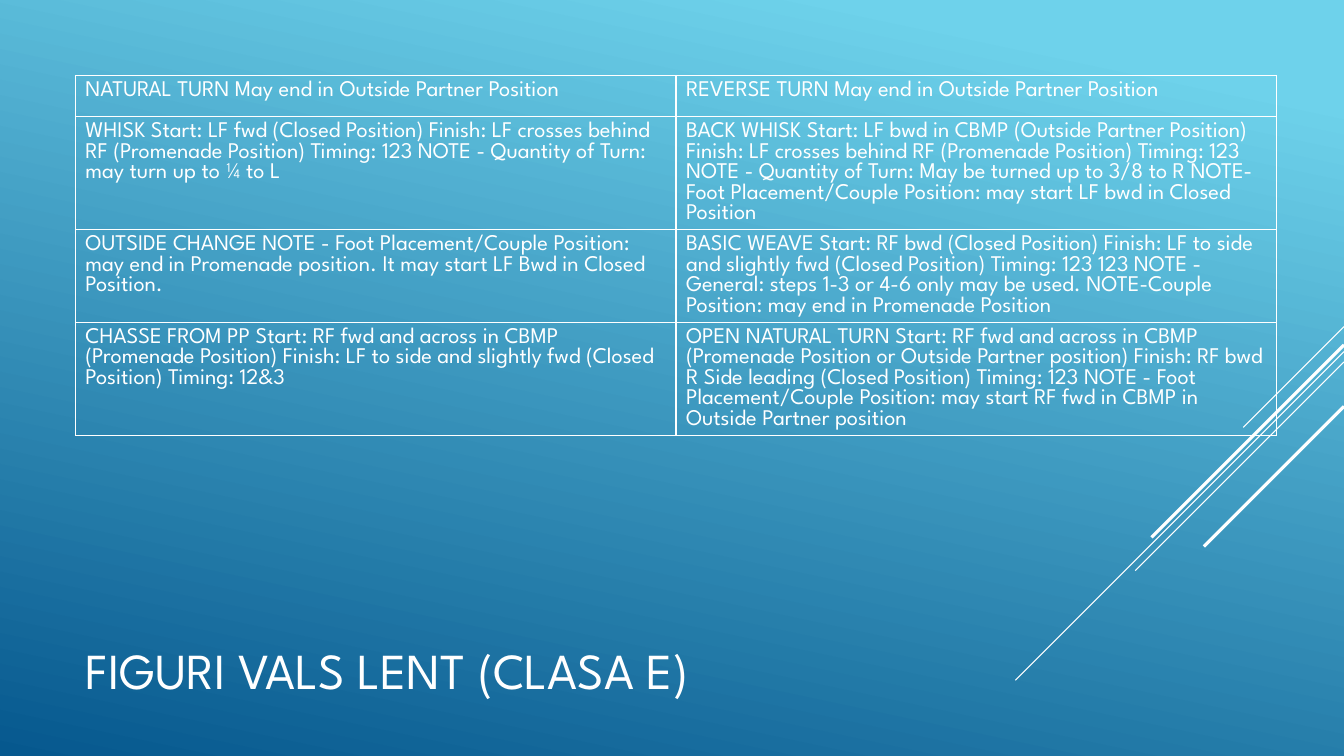
from dataclasses import dataclass

from lxml.etree import SubElement
from pptx import Presentation
from pptx.dml.color import RGBColor as RGB
from pptx.enum.shapes import MSO_CONNECTOR as CONNECTOR
from pptx.enum.text import MSO_ANCHOR as ANCHOR
from pptx.oxml.ns import qn
from pptx.util import Cm, Pt

WIDTH, HEIGHT = 33.87, 19.05
MARGIN = 1.9

FIGURES = [
    ("NATURAL TURN May end in Outside Partner Position",
     "REVERSE TURN May end in Outside Partner Position"),
    ("WHISK Start: LF fwd (Closed Position) Finish: LF crosses behind RF "
     "(Promenade Position) Timing: 123 NOTE - Quantity of Turn: may turn up to ¼ to L",
     "BACK WHISK Start: LF bwd in CBMP (Outside Partner Position) Finish: LF crosses "
     "behind RF (Promenade Position) Timing: 123 NOTE - Quantity of Turn: May be turned "
     "up to 3/8 to R NOTE-Foot Placement/Couple Position: may start LF bwd in Closed Position"),
    ("OUTSIDE CHANGE NOTE - Foot Placement/Couple Position: may end in Promenade "
     "position. It may start LF Bwd in Closed Position.",
     "BASIC WEAVE Start: RF bwd (Closed Position) Finish: LF to side and slightly fwd "
     "(Closed Position) Timing: 123 123 NOTE - General: steps 1-3 or 4-6 only may be "
     "used. NOTE-Couple Position: may end in Promenade Position"),
    ("CHASSE FROM PP Start: RF fwd and across in CBMP (Promenade Position) Finish: LF "
     "to side and slightly fwd (Closed Position) Timing: 12&3",
     "OPEN NATURAL TURN Start: RF fwd and across in CBMP (Promenade Position or Outside "
     "Partner position) Finish: RF bwd R Side leading (Closed Position) Timing: 123 "
     "NOTE - Foot Placement/Couple Position: may start RF fwd in CBMP in Outside "
     "Partner position"),
]

# Height at the right edge, horizontal reach, weight in points
RAYS = [
    (8.23, 2.54, 0.75),
    (8.86, 8.28, 0.75),
    (9.12, 5.26, 0.75),
    (8.69, 4.85, 2.25),
    (10.24, 3.53, 2.25),
]


@dataclass(frozen=True)
class Theme:
    font: str = "League Spartan"
    ink: str = "FFFFFF"
    sky: str = "6ED2EB"
    deep: str = "06588E"
    title_size: int = 36
    body_size: int = 16
    body_leading: float = 14.7
    border: int = 1


def write(tf, text, *, font, size, color, leading=None):
    p = tf.paragraphs[0]
    if leading:
        p.line_spacing = Pt(leading)
    r = p.add_run()
    r.text = text
    r.font.name = font
    r.font.size = Pt(size)
    r.font.color.rgb = RGB.from_string(color)


class SlideBuilder:
    def __init__(self, slide, theme):
        self.slide = slide
        self.theme = theme

    def background(self, angle):
        """Fill with the theme gradient; angle runs counter-clockwise."""
        fill = self.slide.background.fill
        fill.gradient()
        fill.gradient_angle = angle
        stops = ((0.1, self.theme.sky), (1, self.theme.deep))
        for stop, (position, color) in zip(fill.gradient_stops, stops):
            stop.position = position
            stop.color.rgb = RGB.from_string(color)

    def ray(self, y, reach, weight):
        """Draw a 45° line down and left from the right edge."""
        line = self.slide.shapes.add_connector(
            CONNECTOR.STRAIGHT, Cm(WIDTH), Cm(y), Cm(WIDTH - reach), Cm(y + reach))
        line.line.color.rgb = RGB.from_string(self.theme.ink)
        line.line.width = Pt(weight)
        SubElement(line._element.spPr, qn("a:effectLst"))

    def title(self, text, x, y, w, h):
        tf = self.slide.shapes.add_textbox(Cm(x), Cm(y), Cm(w), Cm(h)).text_frame
        tf.word_wrap = True
        tf.vertical_anchor = ANCHOR.MIDDLE
        write(tf, text, font=self.theme.font, size=self.theme.title_size,
              color=self.theme.ink)

    def table(self, rows, x, y, w, row_height):
        cols = len(rows[0])
        table = self.slide.shapes.add_table(
            len(rows), cols, Cm(x), Cm(y), Cm(w), Cm(row_height * len(rows))).table
        table.first_row = table.horz_banding = False
        for i, row in enumerate(rows):
            for j, text in enumerate(row):
                cell = table.cell(i, j)
                self.outline(cell)
                cell.fill.background()
                write(cell.text_frame, text, font=self.theme.font,
                      size=self.theme.body_size, color=self.theme.ink,
                      leading=self.theme.body_leading)

    def outline(self, cell):
        tcPr = cell._tc.get_or_add_tcPr()
        for side in "LRTB":
            ln = SubElement(tcPr, qn(f"a:ln{side}"), w=str(Pt(self.theme.border)))
            fill = SubElement(ln, qn("a:solidFill"))
            SubElement(fill, qn("a:srgbClr"), val=self.theme.ink)


def main():
    prs = Presentation()
    prs.slide_width, prs.slide_height = Cm(WIDTH), Cm(HEIGHT)
    page = SlideBuilder(prs.slides.add_slide(prs.slide_layouts[6]), Theme())
    page.background(angle=258)
    for ray in RAYS:
        page.ray(*ray)
    page.title("FIGURI VALS LENT (CLASA E)", MARGIN, 15.65, 23.7, 2.44)
    page.table(FIGURES, MARGIN, MARGIN, 30.27, row_height=1.04)
    prs.save("out.pptx")


if __name__ == "__main__":
    main()
